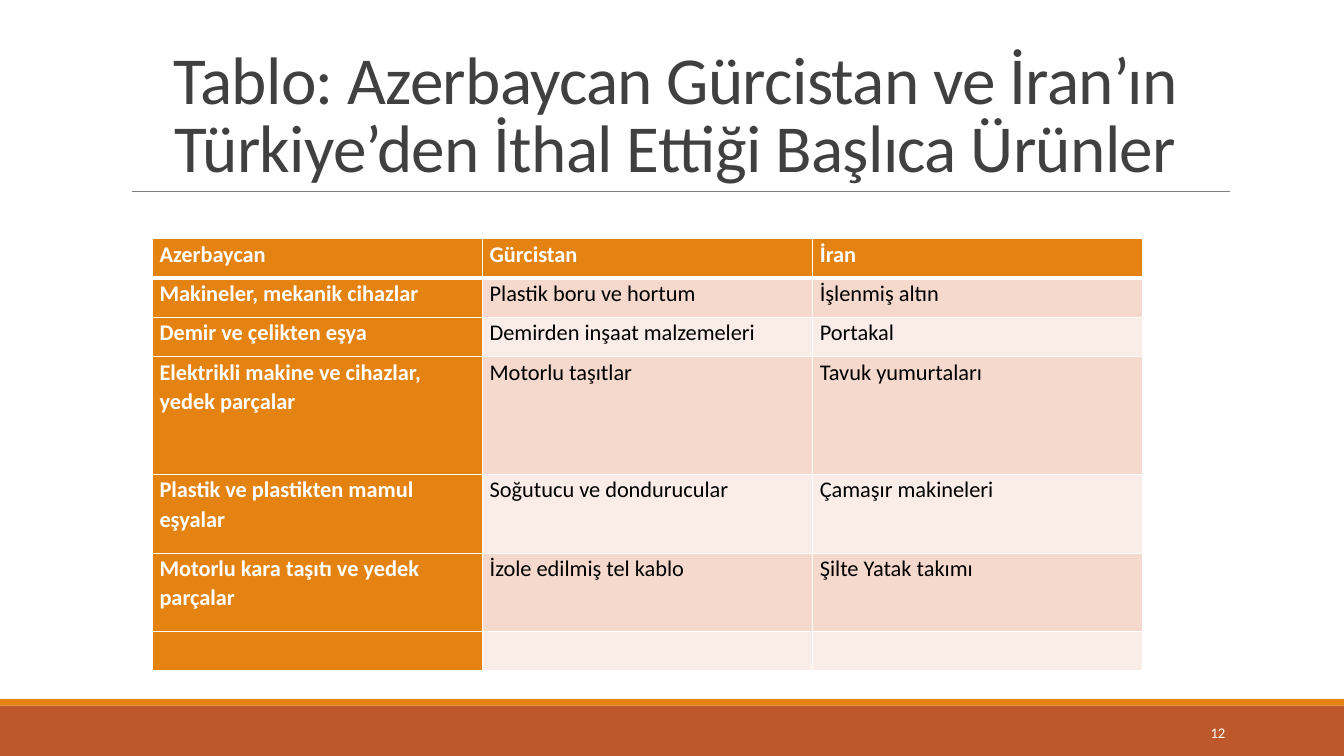
"""Build a slide with a table of the main goods three countries import from Türkiye."""
from lxml import etree
from pptx import Presentation
from pptx.dml.color import RGBColor
from pptx.enum.shapes import MSO_CONNECTOR, MSO_SHAPE
from pptx.enum.text import MSO_ANCHOR, PP_ALIGN
from pptx.oxml.ns import qn
from pptx.util import Cm, Pt

LEFT, CENTER, RIGHT = PP_ALIGN.LEFT, PP_ALIGN.CENTER, PP_ALIGN.RIGHT
MIDDLE, BOTTOM = MSO_ANCHOR.MIDDLE, MSO_ANCHOR.BOTTOM
RECTANGLE, STRAIGHT = MSO_SHAPE.RECTANGLE, MSO_CONNECTOR.STRAIGHT

TITLE = "Tablo: Azerbaycan Gürcistan ve İran’ın Türkiye’den İthal Ettiği Başlıca Ürünler"
PAGE_NUMBER = "12"
ROWS = [
    ("Azerbaycan", "Gürcistan", "İran"),
    ("Makineler, mekanik cihazlar", "Plastik boru ve hortum", "İşlenmiş altın"),
    ("Demir ve çelikten eşya", "Demirden inşaat malzemeleri", "Portakal"),
    ("Elektrikli makine ve cihazlar, yedek parçalar", "Motorlu taşıtlar", "Tavuk yumurtaları"),
    ("Plastik ve plastikten mamul eşyalar", "Soğutucu ve dondurucular", "Çamaşır makineleri"),
    ("Motorlu kara taşıtı ve yedek parçalar", "İzole edilmiş tel kablo", "Şilte Yatak takımı"),
    ("", "", ""),
]
ROW_UNITS = (1, 1, 1, 3, 2, 2, 1)
THEME = {
    "font": "Calibri", "title_size": 48, "cell_size": 16, "number_size": 10.5,
    "title": "404040", "rule": "808080", "light": "FFFFFF", "dark": "000000",
    "accent": "E48312", "footer": "BD582C", "bands": ("FAEDE7", "F5D9CC"),
}
WIDTH, HEIGHT = 33.87, 19.05
FOOTER_TOP, STRIPE_HEIGHT = 17.78, 0.17
TABLE_LEFT, TABLE_TOP, COLUMN_WIDTH, ROW_UNIT = 3.84, 6.02, 8.32, 0.99


def write(frame, text, size, color, bold=False, align=LEFT, line_spacing=1.0, tracking=0):
    frame.word_wrap = True
    paragraph = frame.paragraphs[0]
    paragraph.alignment = align
    paragraph.line_spacing = line_spacing
    paragraph.font.size = Pt(size)
    if not text:
        return
    run = paragraph.add_run()
    run.text = text
    run.font.name = THEME["font"]
    run.font.size = Pt(size)
    run.font.bold = bold
    run.font.color.rgb = RGBColor.from_string(color)
    if tracking:
        run._r.get_or_add_rPr().set("spc", str(round(tracking * 100)))


def add_text(slide, box, anchor, text, **text_format):
    frame = slide.shapes.add_textbox(*map(Cm, box)).text_frame
    frame.vertical_anchor = anchor
    write(frame, text, **text_format)


def add_bar(slide, top, height, color):
    bar = slide.shapes.add_shape(RECTANGLE, 0, Cm(top), Cm(WIDTH), Cm(height))
    bar.shadow.inherit = False
    bar.fill.solid()
    bar.fill.fore_color.rgb = RGBColor.from_string(color)
    bar.line.fill.background()


def add_rule(slide, left, right, top):
    rule = slide.shapes.add_connector(STRAIGHT, Cm(left), Cm(top), Cm(right), Cm(top))
    rule.line.color.rgb = RGBColor.from_string(THEME["rule"])
    rule.line.width = Pt(0.5)
    etree.SubElement(rule._element.spPr, qn("a:effectLst"))


def set_borders(cell, widths):
    properties = cell._tc.get_or_add_tcPr()
    for side, width in widths.items():
        border = etree.SubElement(properties, qn(f"a:ln{side}"), w=str(Pt(width)))
        fill = etree.SubElement(border, qn("a:solidFill"))
        etree.SubElement(fill, qn("a:srgbClr"), val=THEME["light"])


def format_cell(cell, text, row, column):
    heading = row == 0 or column == 0
    cell.margin_left = cell.margin_right = Cm(0.18)
    cell.margin_top = cell.margin_bottom = 0
    set_borders(cell, {"L": 1, "R": 1, "T": 3 if row == 1 else 1, "B": 3 if row == 0 else 1})
    cell.fill.solid()
    fill = THEME["accent"] if heading else THEME["bands"][row % 2]
    cell.fill.fore_color.rgb = RGBColor.from_string(fill)
    write(cell.text_frame, text, size=THEME["cell_size"], bold=heading,
          color=THEME["light"] if heading else THEME["dark"], line_spacing=1.07)


def add_import_table(slide):
    columns = len(ROWS[0])
    table = slide.shapes.add_table(
        len(ROWS), columns, Cm(TABLE_LEFT), Cm(TABLE_TOP),
        Cm(columns * COLUMN_WIDTH), Cm(sum(ROW_UNITS) * ROW_UNIT)).table
    table.first_col = True
    for column in table.columns:
        column.width = Cm(COLUMN_WIDTH)
    for row, (texts, units) in enumerate(zip(ROWS, ROW_UNITS)):
        table.rows[row].height = Cm(units * ROW_UNIT)
        for column, text in enumerate(texts):
            format_cell(table.cell(row, column), text, row, column)


def main():
    presentation = Presentation()
    presentation.slide_width, presentation.slide_height = Cm(WIDTH), Cm(HEIGHT)
    slide = presentation.slides.add_slide(presentation.slide_layouts[6])
    add_bar(slide, FOOTER_TOP, HEIGHT - FOOTER_TOP, THEME["footer"])
    add_bar(slide, FOOTER_TOP - STRIPE_HEIGHT, STRIPE_HEIGHT, THEME["accent"])
    add_rule(slide, 3.33, 31, 4.82)
    add_text(slide, (3.05, 0.79, 27.94, 4.04), BOTTOM, TITLE, size=THEME["title_size"],
             color=THEME["title"], align=CENTER, line_spacing=0.85, tracking=-0.5)
    add_import_table(slide)
    add_text(slide, (27.5, 17.94, 3.63, 1.02), MIDDLE, PAGE_NUMBER,
             size=THEME["number_size"], color=THEME["light"], align=RIGHT)
    presentation.save("out.pptx")


if __name__ == "__main__":
    main()
